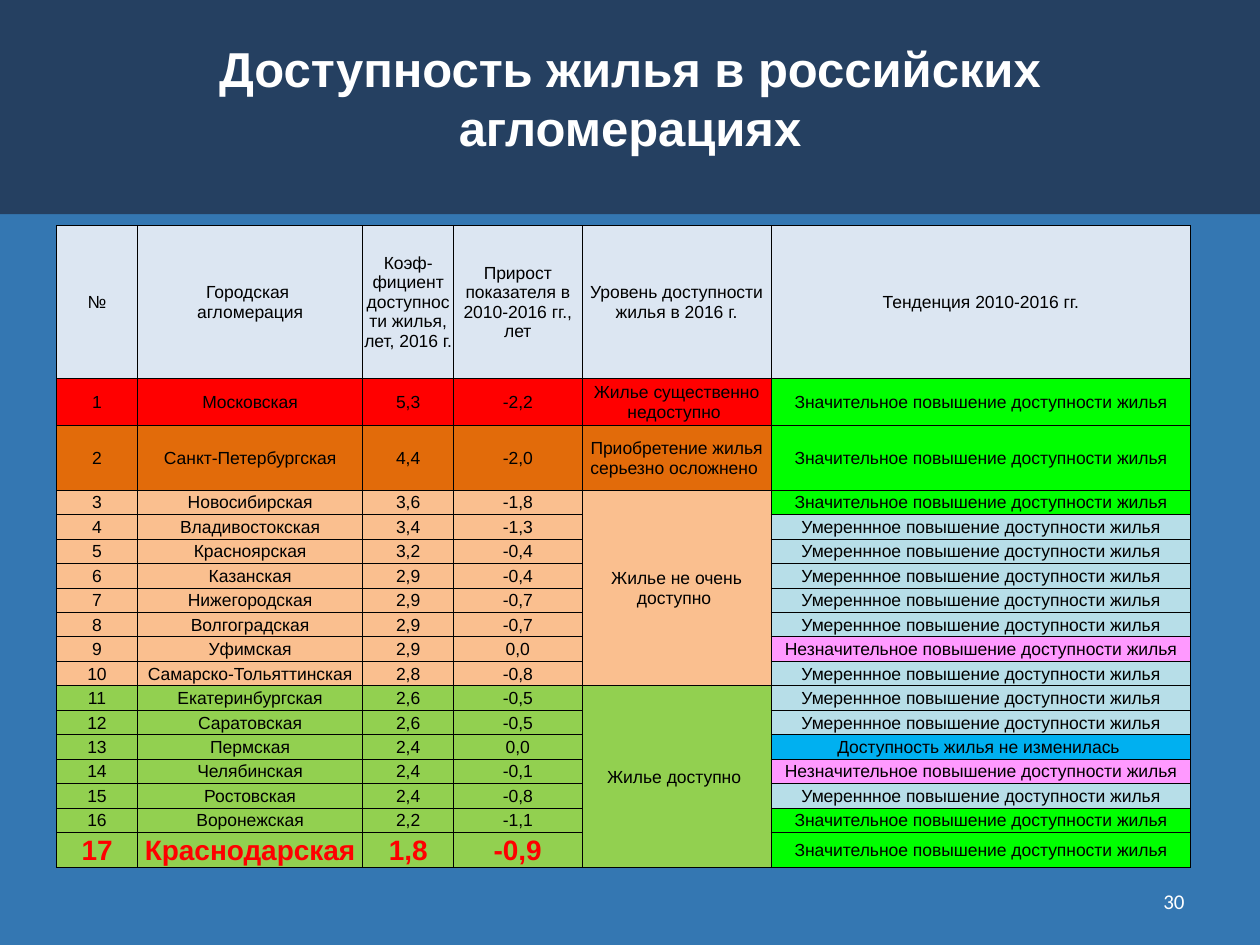
from dataclasses import dataclass

from lxml.etree import SubElement
from pptx import Presentation
from pptx.dml.color import RGBColor
from pptx.enum.shapes import MSO_SHAPE
from pptx.enum.text import MSO_ANCHOR as Anchor, PP_ALIGN as Align
from pptx.oxml import parse_xml
from pptx.oxml.ns import nsdecls
from pptx.util import Inches, Pt

COLORS = {
    "background": "3477B2", "band": "254061", "white": "FFFFFF",
    "black": "000000", "red": "FF0000", "header": "DCE6F2",
    "orange": "E26B0A", "peach": "FABF8F", "green": "92D050",
    "strong": "00FF00", "moderate": "B7DEE8", "slight": "FF99FF",
    "unchanged": "00B0F0",
}
TRENDS = {
    "strong": "Значительное повышение доступности жилья",
    "moderate": "Умереннное повышение доступности жилья",
    "slight": "Незначительное повышение доступности жилья",
    "unchanged": "Доступность жилья не изменилась ",
}
HEADERS = [
    "№",
    "Городская \nагломерация",
    "Коэф-фициент доступности жилья, лет, 2016 г.",
    "Прирост показателя в 2010-2016 гг., лет",
    "Уровень доступности жилья в 2016 г.",
    "Тенденция 2010-2016 гг.",
]
COL_WIDTHS = [0.64, 1.79, 0.72, 1.02, 1.5, 3.33]
LEVEL_COL, TREND_COL = 4, 5


@dataclass
class City:
    name: str
    ratio: str
    change: str
    trend: str
    highlight: bool = False


@dataclass
class Level:
    text: str
    color: str
    cities: list[City]


LEVELS = [
    Level("Жилье существенно недоступно ", "red", [
        City("Московская", "5,3", "-2,2", "strong"),
    ]),
    Level("Приобретение жилья серьезно осложнено ", "orange", [
        City("Санкт-Петербургская", "4,4", "-2,0", "strong"),
    ]),
    Level("Жилье не очень доступно ", "peach", [
        City("Новосибирская", "3,6", "-1,8", "strong"),
        City("Владивостокская", "3,4", "-1,3", "moderate"),
        City("Красноярская", "3,2", "-0,4", "moderate"),
        City("Казанская", "2,9", "-0,4", "moderate"),
        City("Нижегородская", "2,9", "-0,7", "moderate"),
        City("Волгоградская", "2,9", "-0,7", "moderate"),
        City("Уфимская", "2,9", "0,0", "slight"),
        City("Самарско-Тольяттинская", "2,8", "-0,8", "moderate"),
    ]),
    Level("Жилье доступно ", "green", [
        City("Екатеринбургская", "2,6", "-0,5", "moderate"),
        City("Саратовская", "2,6", "-0,5", "moderate"),
        City("Пермская", "2,4", "0,0", "unchanged"),
        City("Челябинская", "2,4", "-0,1", "slight"),
        City("Ростовская", "2,4", "-0,8", "moderate"),
        City("Воронежская", "2,2", "-1,1", "strong"),
        City("Краснодарская", "1,8", "-0,9", "strong", highlight=True),
    ]),
]
CITY_COUNT = sum(len(level.cities) for level in LEVELS)
ROW_HEIGHTS = [Inches(1.21), Inches(0.38), Inches(0.51),
               *[Pt(14)] * (CITY_COUNT - 3), Inches(0.25)]


def rgb(name: str) -> RGBColor:
    return RGBColor.from_string(COLORS[name])


def write(tf, text: str, size: float, color: str = "black", bold: bool = False,
          align=Align.CENTER, font: str = "Arial") -> None:
    """Write each line of the text as a paragraph with one run."""
    for i, line in enumerate(text.split("\n")):
        p = tf.add_paragraph() if i else tf.paragraphs[0]
        p.alignment = align
        r = p.add_run()
        r.text = line
        r.font.name, r.font.size, r.font.bold = font, Pt(size), bold
        r.font.color.rgb = rgb(color)


def style_cell(cell, fill: str) -> None:
    """Set fill, anchor, margins and thin black borders."""
    cell.vertical_anchor = Anchor.MIDDLE
    cell.margin_left = cell.margin_right = cell.margin_top = Inches(0.01)
    cell.margin_bottom = 0
    tc_pr = cell._tc.get_or_add_tcPr()
    for i, side in enumerate(("lnL", "lnR", "lnT", "lnB")):
        ln = parse_xml(f'<a:{side} {nsdecls("a")} w="{Pt(0.5)}"><a:solidFill>'
                       f'<a:srgbClr val="{COLORS["black"]}"/>'
                       f'</a:solidFill></a:{side}>')
        tc_pr.insert(i, ln)
    cell.fill.solid()
    cell.fill.fore_color.rgb = rgb(fill)


def add_housing_table(s) -> None:
    table = s.shapes.add_table(
        len(ROW_HEIGHTS), len(COL_WIDTHS), Inches(0.45), Inches(1.79),
        Inches(sum(COL_WIDTHS)), sum(ROW_HEIGHTS)).table
    table.first_row = table.horz_banding = False
    for column, width in zip(table.columns, COL_WIDTHS):
        column.width = Inches(width)
    for table_row, height in zip(table.rows, ROW_HEIGHTS):
        table_row.height = height

    for col, text in enumerate(HEADERS):
        style_cell(table.cell(0, col), "header")
        write(table.cell(0, col).text_frame, text, 10)

    row = 1
    for level in LEVELS:
        first = table.cell(row, LEVEL_COL)
        write(first.text_frame, level.text, 10)
        last_row = row + len(level.cities) - 1
        if last_row > row:
            first.merge(table.cell(last_row, LEVEL_COL))
        for city in level.cities:
            for col in range(len(COL_WIDTHS)):
                fill = city.trend if col == TREND_COL else level.color
                style_cell(table.cell(row, col), fill)
            size, color = (16, "red") if city.highlight else (10, "black")
            values = (str(row), city.name, city.ratio, city.change)
            for col, text in enumerate(values):
                write(table.cell(row, col).text_frame, text, size, color,
                      city.highlight)
            write(table.cell(row, TREND_COL).text_frame, TRENDS[city.trend], 10)
            row += 1


def add_title(s) -> None:
    """Fill the title and put the dark band behind it."""
    band = s.shapes.add_shape(MSO_SHAPE.RECTANGLE, 0, 0, Inches(10), Inches(1.7))
    band.shadow.inherit = False
    band.fill.solid()
    band.fill.fore_color.rgb = rgb("band")
    band.line.fill.background()
    title = s.shapes.title
    title._element.addprevious(band._element)
    title.left, title.top = Inches(0.5), Inches(0.15)
    title.width, title.height = Inches(9), Inches(1.25)
    title.text_frame.vertical_anchor = Anchor.MIDDLE
    write(title.text_frame, "Доступность жилья в российских агломерациях",
          28, "white", bold=True)


def add_page_number(s) -> None:
    sp = s.shapes.add_textbox(Inches(7.17), Inches(6.95), Inches(2.33), Inches(0.4))
    tf = sp.text_frame
    tf.word_wrap = True
    tf.vertical_anchor = Anchor.MIDDLE
    write(tf, "30", 12, "white", align=Align.RIGHT, font="Calibri")


def main() -> None:
    prs = Presentation()
    prs.slide_width, prs.slide_height = Inches(10), Inches(7.5)
    s = prs.slides.add_slide(prs.slide_layouts[5])
    s.background.fill.solid()
    s.background.fill.fore_color.rgb = rgb("background")
    add_title(s)
    add_page_number(s)
    add_housing_table(s)
    prs.save("out.pptx")


if __name__ == "__main__":
    main()
